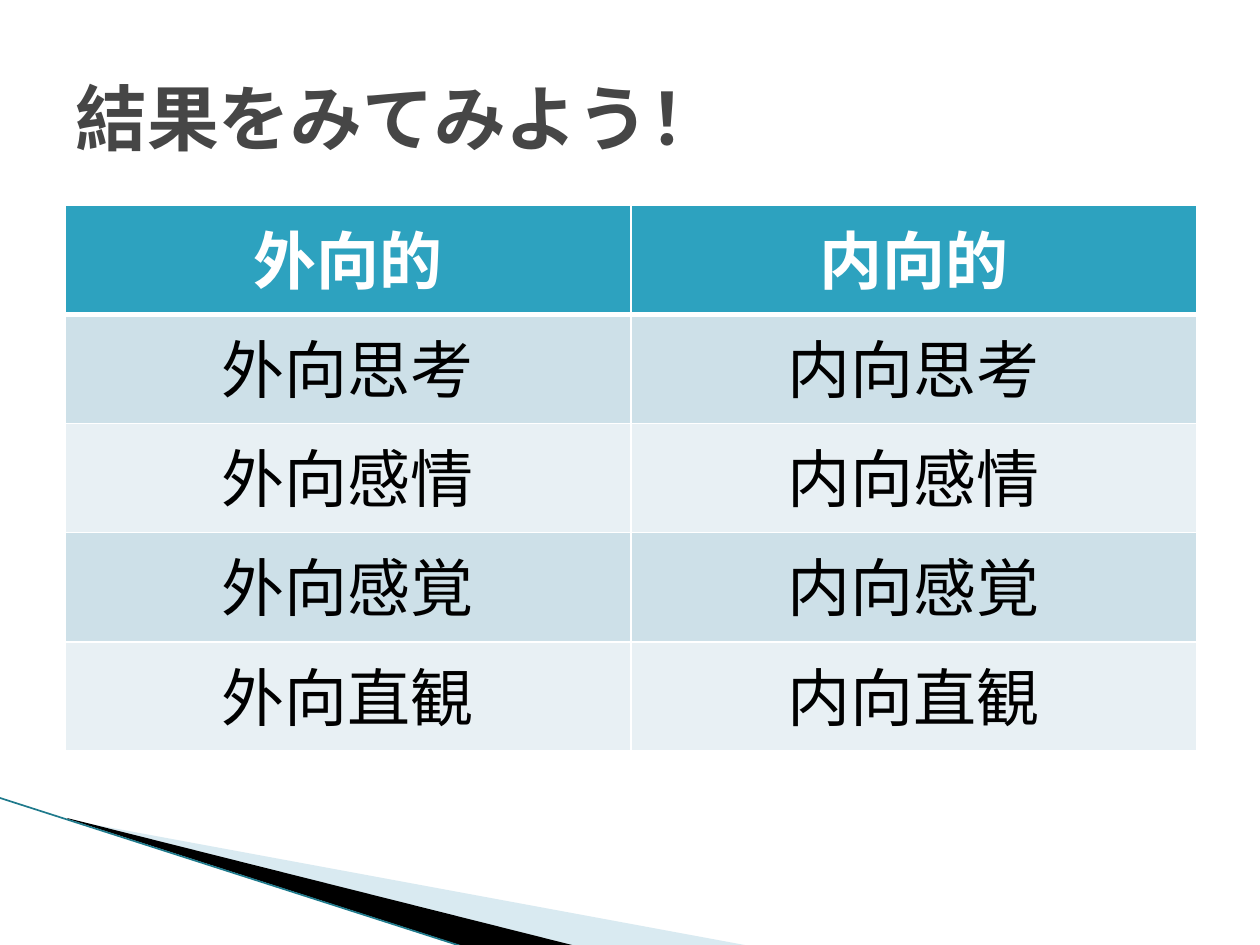
from lxml.etree import SubElement
from pptx import Presentation
from pptx.dml.color import RGBColor
from pptx.enum.shapes import MSO_CONNECTOR
from pptx.enum.text import MSO_ANCHOR, PP_ALIGN
from pptx.oxml.ns import qn
from pptx.util import Pt

SCALE = 914400 / 126
FONT = "DejaVu Sans Mono"
ROWS = [
    ("外向的", "内向的"),
    ("外向思考", "内向思考"),
    ("外向感情", "内向感情"),
    ("外向感覚", "内向感覚"),
    ("外向直観", "内向直観"),
]


def px(value):
    return round(value * SCALE)


def color(hex_value):
    return RGBColor.from_string(hex_value)


def style(paragraph, size, hex_value, bold):
    font = paragraph.font
    font.name = FONT
    font.size = Pt(size)
    font.bold = bold
    font.color.rgb = color(hex_value)


def add_wedge(slide, left, top, points, hex_value, opacity=100):
    corners = [(left + x, top + y) for x, y in points]
    builder = slide.shapes.build_freeform(*corners[0], scale=SCALE)
    builder.add_line_segments(corners[1:], close=True)
    shape = builder.convert_to_shape()
    shape.shadow.inherit = False
    shape.fill.solid()
    shape.fill.fore_color.rgb = color(hex_value)
    shape.line.fill.background()
    if opacity < 100:
        fill_color = shape._element.spPr.find(".//" + qn("a:srgbClr"))
        SubElement(fill_color, qn("a:alpha"), val=str(opacity * 1000))


def add_corner(slide, left, top, width, height):
    add_wedge(slide, left, top, [(69, 22), (750, 148), (575, 148), (69, 21)], "A0CBDC", 40)
    add_wedge(slide, left, top, [(67, 20), (576, 148), (469, 150), (68, 21)], "000000")
    line = slide.shapes.add_connector(
        MSO_CONNECTOR.STRAIGHT, px(left), px(top), px(left + width), px(top + height))
    line.line.color.rgb = color("1F7A8C")
    line.line.width = Pt(0.95)
    SubElement(line._element.spPr, qn("a:effectLst"))


def add_title(slide, left, top, width, height, text):
    shape = slide.shapes.add_textbox(px(left), px(top), px(width), px(height))
    frame = shape.text_frame
    frame.word_wrap = True
    frame.vertical_anchor = MSO_ANCHOR.MIDDLE
    paragraph = frame.paragraphs[0]
    paragraph.text = text
    style(paragraph, 41, "464646", True)


def set_borders(cell, bottom_width):
    properties = cell._tc.get_or_add_tcPr()
    widths = {"a:lnL": 1, "a:lnR": 1, "a:lnT": 1, "a:lnB": bottom_width}
    for index, (tag, width) in enumerate(widths.items()):
        border = SubElement(properties, qn(tag), w=str(Pt(width)))
        fill = SubElement(border, qn("a:solidFill"))
        SubElement(fill, qn("a:srgbClr"), val="FFFFFF")
        properties.insert(index, border)


def add_types_table(slide, left, top, width, height):
    table = slide.shapes.add_table(
        len(ROWS), len(ROWS[0]), px(left), px(top), px(width), px(height)).table
    for row_index, texts in enumerate(ROWS):
        header = row_index == 0
        fill = "2DA2BF" if header else ("E8F0F4", "CDE0E8")[row_index % 2]
        for column_index, text in enumerate(texts):
            cell = table.cell(row_index, column_index)
            cell.fill.solid()
            cell.fill.fore_color.rgb = color(fill)
            set_borders(cell, 3 if header else 1)
            paragraph = cell.text_frame.paragraphs[0]
            paragraph.text = text
            paragraph.alignment = PP_ALIGN.CENTER
            style(paragraph, 36, "FFFFFF" if header else "000000", header)


def main():
    presentation = Presentation()
    presentation.slide_width = px(1260)
    presentation.slide_height = px(945)
    slide = presentation.slides.add_slide(presentation.slide_layouts[6])
    add_corner(slide, 0, 798, 467, 150)
    add_types_table(slide, 65, 205, 1132, 546)
    add_title(slide, 63, 38, 1134, 157, "結果をみてみよう！")
    presentation.save("out.pptx")


if __name__ == "__main__":
    main()
